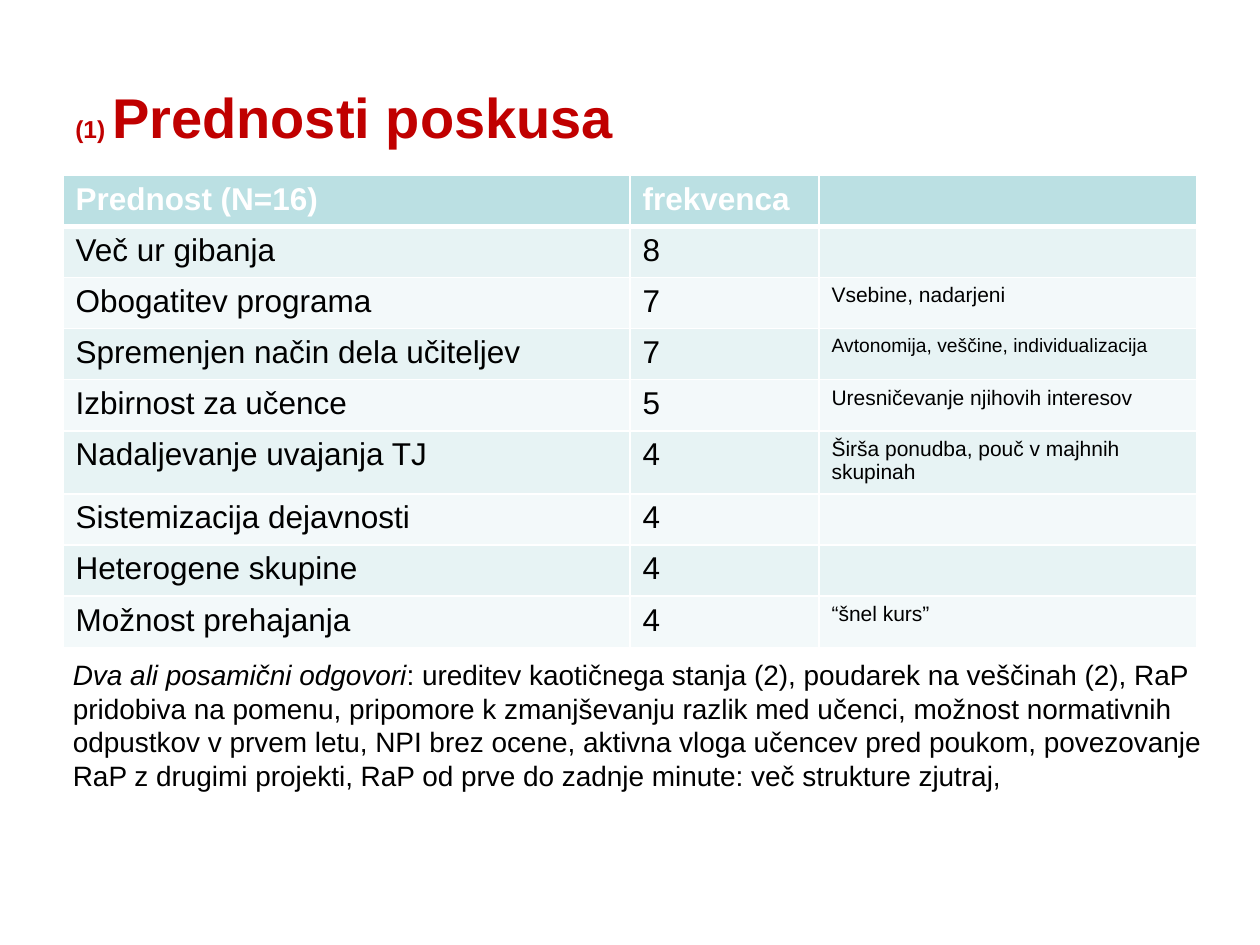
"""Build the slide listing the advantages of the pilot with their frequencies."""
from lxml import etree
from pptx import Presentation
from pptx import util as u
from pptx.dml.color import RGBColor
from pptx.enum import text
from pptx.oxml import ns

C = {"title": "C00000", "head": "BBE0E3", "odd": "E7F3F4", "even": "F3F9FA",
     "white": "FFFFFF", "black": "000000"}
ROWS = [
    ("Prednost (N=16)", "frekvenca", ""),
    ("Več ur gibanja", "8", ""),
    ("Obogatitev programa", "7", "Vsebine, nadarjeni"),
    ("Spremenjen način dela učiteljev", "7", "Avtonomija, veščine, individualizacija"),
    ("Izbirnost za učence", "5", "Uresničevanje njihovih interesov"),
    ("Nadaljevanje uvajanja TJ", "4", "Širša ponudba, pouč v majhnih skupinah"),
    ("Sistemizacija dejavnosti", "4", ""),
    ("Heterogene skupine", "4", ""),
    ("Možnost prehajanja", "4", "“šnel kurs”"),
]
COLS = (0.45, 0.15, 0.3)
ROW_H = u.Inches(0.406)


def add_run(p, words, size, color, bold=False, italic=False):
    r = p.add_run()
    r.text = words
    f = r.font
    f.name, f.size, f.bold, f.italic = "Arial", u.Pt(size), bold, italic
    f.color.rgb = RGBColor.from_string(C[color])


def add_border(cell, side, width):
    ln = etree.SubElement(cell._tc.get_or_add_tcPr(), ns.qn(f"a:ln{side}"), w=str(u.Pt(width)))
    fill = etree.SubElement(ln, ns.qn("a:solidFill"))
    etree.SubElement(fill, ns.qn("a:srgbClr"), val=C["white"])


prs = Presentation()
prs.slide_width, prs.slide_height = u.Inches(10), u.Inches(7.5)
W, H = prs.slide_width, prs.slide_height
s = prs.slides.add_slide(prs.slide_layouts[6])

tf = s.shapes.add_textbox(int(W * 0.05), int(H * 0.04), int(W * 0.9), int(H / 6)).text_frame
tf.word_wrap = True
tf.vertical_anchor = text.MSO_ANCHOR.MIDDLE
p = tf.paragraphs[0]
add_run(p, "(1) ", 14, "title", bold=True)
add_run(p, "Prednosti poskusa", 32, "title", bold=True)

table = s.shapes.add_table(len(ROWS), len(COLS), int(W * 0.05), u.Inches(1.39),
                           int(W * sum(COLS)), ROW_H * len(ROWS)).table
for column, share in zip(table.columns, COLS):
    column.width = int(W * share)
for i, row in enumerate(ROWS):
    table.rows[i].height = ROW_H
    fill = "head" if i == 0 else "odd" if i % 2 else "even"
    for j, words in enumerate(row):
        cell = table.cell(i, j)
        for side in "LRTB":
            add_border(cell, side, 3 if (i, side) in ((0, "B"), (1, "T")) else 1)
        cell.fill.solid()
        cell.fill.fore_color.rgb = RGBColor.from_string(C[fill])
        if words:
            size = 18 if j < 2 else 11 if i == 3 else 12
            add_run(cell.text_frame.paragraphs[0], words, size,
                    "black" if i else "white", bold=i == 0)

tf = s.shapes.add_textbox(int(W * 0.048), u.Inches(5.17), int(W * 0.952), u.Inches(1.18)).text_frame
tf.word_wrap = True
p = tf.paragraphs[0]
add_run(p, "Dva ali posamični odgovori", 16, "black", italic=True)
add_run(p, ": ureditev kaotičnega stanja (2), poudarek na veščinah (2), RaP pridobiva na pomenu, "
           "pripomore k zmanjševanju razlik med učenci, možnost normativnih odpustkov v prvem letu, "
           "NPI brez ocene, aktivna vloga učencev pred poukom, povezovanje RaP z drugimi projekti, "
           "RaP od prve do zadnje minute: več strukture zjutraj,", 16, "black")

prs.save("out.pptx")
